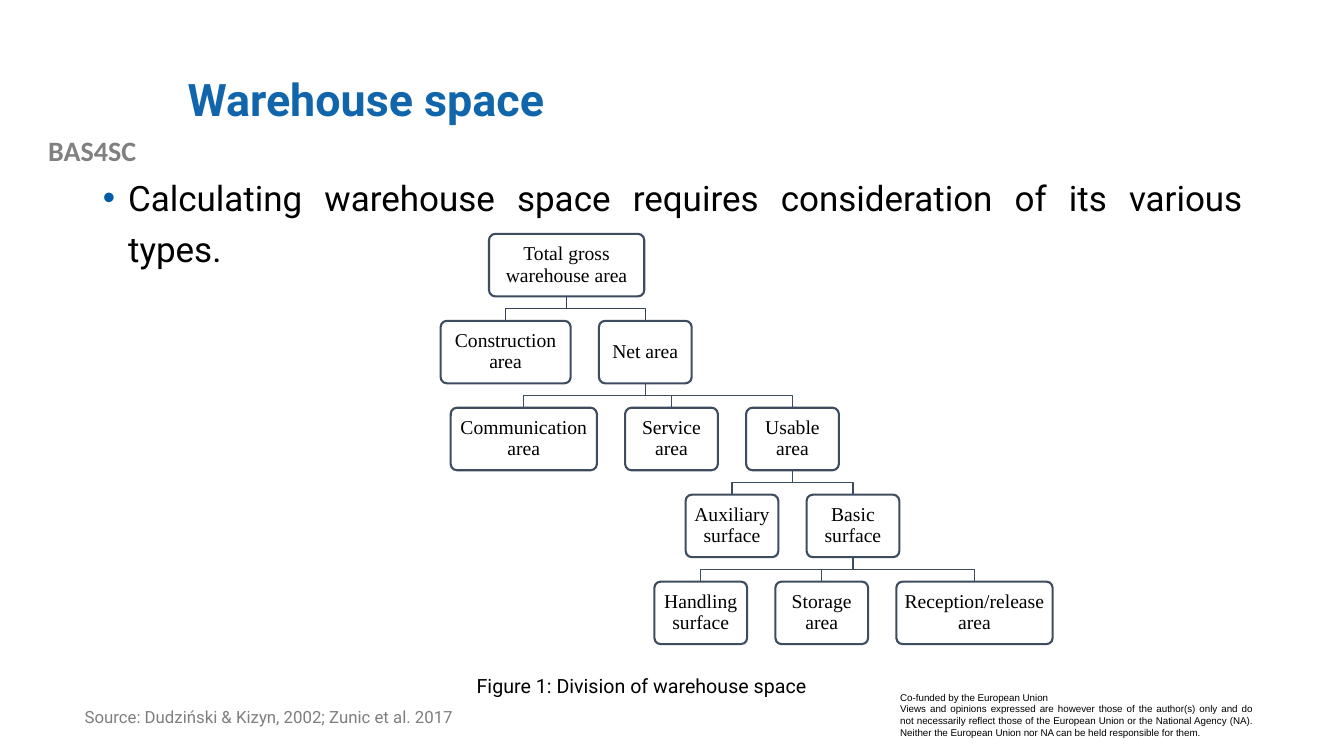
from lxml import etree
from pptx import Presentation
from pptx.dml.color import RGBColor
from pptx.enum.shapes import MSO_SHAPE
from pptx.enum.text import MSO_ANCHOR, MSO_AUTO_SIZE, PP_ALIGN
from pptx.oxml.ns import qn
from pptx.util import Inches, Pt

LEFT, CENTER, JUSTIFY = PP_ALIGN.LEFT, PP_ALIGN.CENTER, PP_ALIGN.JUSTIFY
TOP, MIDDLE = MSO_ANCHOR.TOP, MSO_ANCHOR.MIDDLE
NO_AUTOFIT = MSO_AUTO_SIZE.NONE
ROUNDED = MSO_SHAPE.ROUNDED_RECTANGLE
OUTLINE = "3E4C60"


def color(hex_code):
    return RGBColor.from_string(hex_code)


def write(shape, lines, font, hex_code, anchor=TOP, **paragraph_format):
    frame = shape.text_frame
    frame.word_wrap = True
    frame.auto_size = NO_AUTOFIT
    frame.vertical_anchor = anchor
    frame.text = "\n".join(lines)
    for paragraph in frame.paragraphs:
        for key, value in paragraph_format.items():
            setattr(paragraph, key, value)
        for key, value in font.items():
            setattr(paragraph.font, key, value)
        paragraph.font.color.rgb = color(hex_code)


prs = Presentation()
prs.slide_width, prs.slide_height = Inches(13.33), Inches(7.5)
slide = prs.slides.add_slide(prs.slide_layouts[1])
shapes = slide.shapes

# Title and bullet
title, bullet = shapes.title, slide.placeholders[1]
for placeholder, bounds in ((title, (1.76, 0.4, 10.66, 1.22)),
                            (bullet, (0.92, 1.62, 11.5, 0.91))):
    (placeholder.left, placeholder.top,
     placeholder.width, placeholder.height) = map(Inches, bounds)

write(title, ["Warehouse space"], {"name": "Roboto", "size": Pt(32), "bold": True},
      "1065AB", MIDDLE, alignment=LEFT, line_spacing=0.9)

bullet.text_frame.text = ""
write(bullet, ["Calculating warehouse space requires consideration of its various types."],
      {"name": "Roboto", "size": Pt(25)}, "000000",
      alignment=JUSTIFY, line_spacing=1.2, space_before=Pt(0))
bullet_format = bullet.text_frame.paragraphs[0]._p.get_or_add_pPr()
bullet_format.set("marL", str(Inches(0.25)))
bullet_format.set("indent", str(Inches(-0.25)))
run_defaults = bullet_format.find(qn("a:defRPr"))
bullet_color = etree.Element(qn("a:buClr"))
etree.SubElement(bullet_color, qn("a:srgbClr"), val="015BA6")
bullet_marks = [bullet_color,
                etree.Element(qn("a:buFont"), typeface="Arial"),
                etree.Element(qn("a:buChar"), char="•")]
for mark in bullet_marks:
    if run_defaults is None:
        bullet_format.append(mark)
    else:
        run_defaults.addprevious(mark)

# Project label, funding notice, source and caption
captions = [
    ((0, 1.28, 1.83, 0.44), ["BAS4SC"],
     {"name": "Calibri", "size": Pt(20), "bold": True}, "808080", CENTER, 1.0),
    ((8.83, 6.81, 3.69, 0.57),
     ["Co-funded by the European Union",
      "Views and opinions expressed are however those of the author(s) only and do not "
      "necessarily reflect those of the European Union or the National Agency (NA). "
      "Neither the European Union nor NA can be held responsible for them."],
     {"name": "Arial", "size": Pt(7)}, "000000", JUSTIFY, 1.0),
    ((0.74, 6.98, 5.01, 0.52), ["Source: Dudziński & Kizyn, 2002; Zunic et al. 2017"],
     {"name": "Roboto", "size": Pt(12)}, "7F7F7F", LEFT, 0.9),
    ((3.03, 6.64, 6.67, 0.34), ["Figure 1: Division of warehouse space"],
     {"name": "Roboto", "size": Pt(14)}, "000000", CENTER, 1.0),
]
for bounds, lines, font, hex_code, alignment, spacing in captions:
    write(shapes.add_textbox(*map(Inches, bounds)), lines, font, hex_code,
          alignment=alignment, line_spacing=spacing)

# Area hierarchy: label, parent, level, left, width
areas = [
    ("Total gross warehouse area", None, 0, 4.85, 1.54),
    ("Construction area", "Total gross warehouse area", 1, 4.37, 1.29),
    ("Net area", "Total gross warehouse area", 1, 5.94, 0.92),
    ("Communication area", "Net area", 2, 4.47, 1.45),
    ("Service area", "Net area", 2, 6.2, 0.92),
    ("Usable area", "Net area", 2, 7.4, 0.92),
    ("Auxiliary surface", "Usable area", 3, 6.8, 0.92),
    ("Basic surface", "Usable area", 3, 8, 0.92),
    ("Handling surface", "Basic surface", 4, 6.49, 0.92),
    ("Storage area", "Basic surface", 4, 7.69, 0.92),
    ("Reception/release area", "Basic surface", 4, 8.89, 1.55),
]
FIRST_TOP, LAST_TOP, AREA_HEIGHT = 2.32, 5.77, 0.62
LEVEL_STEP = (LAST_TOP - FIRST_TOP) / 4
centers = {label: left + width / 2 for label, _, _, left, width in areas}

for label, parent, level, left, width in areas:
    top = FIRST_TOP + level * LEVEL_STEP

    # Branch from the parent's bottom to this area's top
    if parent:
        parent_bottom = top - LEVEL_STEP + AREA_HEIGHT
        middle = (parent_bottom + top) / 2
        start_x, end_x = Inches(centers[parent]), Inches(centers[label])
        builder = shapes.build_freeform(start_x, Inches(parent_bottom))
        builder.add_line_segments([(start_x, Inches(middle)), (end_x, Inches(middle)),
                                   (end_x, Inches(top))], close=False)
        branch = builder.convert_to_shape()
        branch.shadow.inherit = False
        branch.fill.background()
        branch.line.color.rgb = color("364355" if level == 1 else OUTLINE)
        branch.line.width = Pt(1)

    area = shapes.add_shape(ROUNDED, *map(Inches, (left, top, width, AREA_HEIGHT)))
    area.adjustments[0] = 0.1
    area.shadow.inherit = False
    area.fill.solid()
    area.fill.fore_color.rgb = color("FFFFFF")
    area.line.color.rgb = color(OUTLINE)
    area.line.width = Pt(1.5)
    for side in ("left", "top", "right", "bottom"):
        setattr(area.text_frame, f"margin_{side}", Inches(0.06))
    write(area, [label], {"name": "Times New Roman", "size": Pt(14)}, "000000", MIDDLE,
          alignment=CENTER, line_spacing=0.9)

prs.save("out.pptx")
